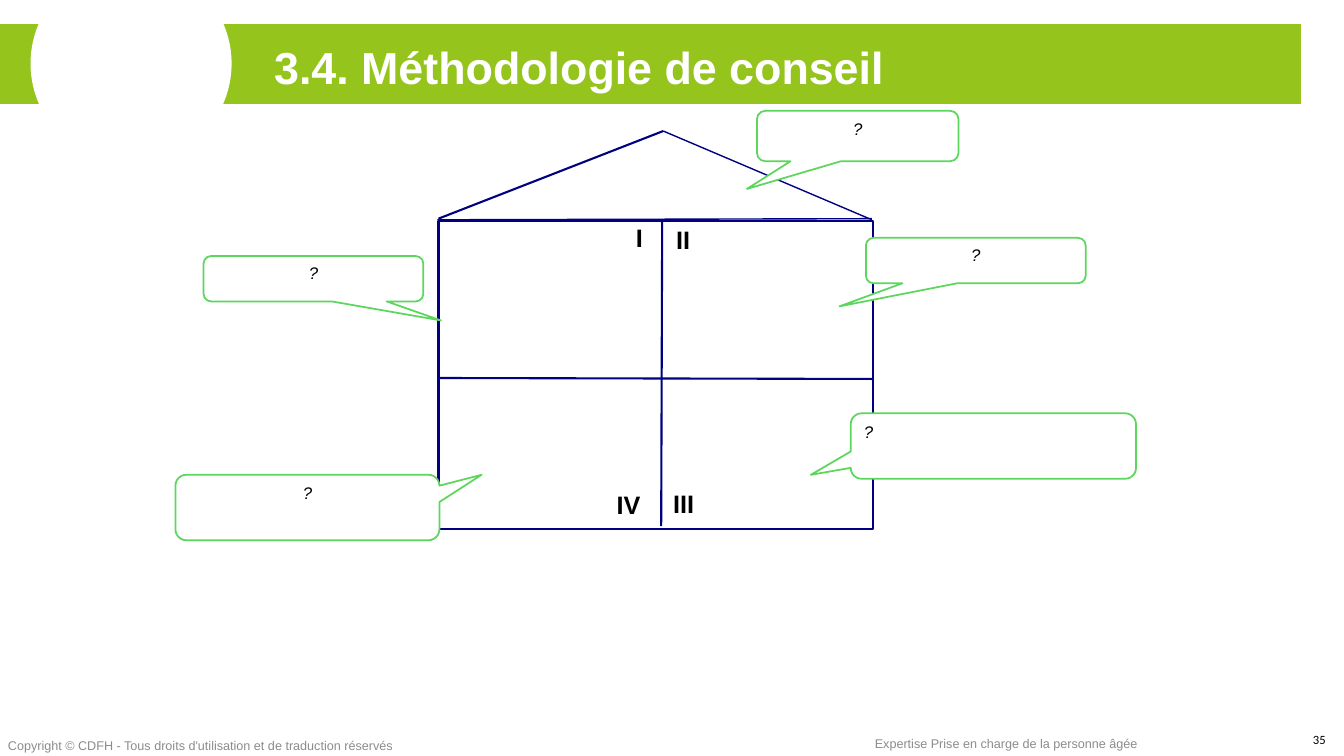
from lxml.etree import SubElement as Sub
from pptx import Presentation
from pptx.dml.color import RGBColor
from pptx.enum.shapes import MSO_CONNECTOR as Conn, MSO_SHAPE as Kind
from pptx.enum.text import MSO_ANCHOR as Anchor, MSO_AUTO_SIZE as Auto, PP_ALIGN as Align
from pptx.oxml.ns import qn
from pptx.util import Pt

GREEN, WHITE, NAVY, LIME, GREY, BLACK = (
    "95C41D", "FFFFFF", "000080", "5CD65C", "8C8C8C", "000000")

TITLE = {"name": "Arial", "size": Pt(32), "bold": True}
ROOM = {"name": "Arial", "size": Pt(18), "bold": True}
ASK = {"name": "Arial", "size": Pt(12), "italic": True}
FOOT = {"name": "Arial", "size": Pt(9)}
PAGE = {"name": "Calibri", "size": Pt(9)}


def tint(part, color):
    """Give a fill or a font a solid colour."""
    if hasattr(part, "solid"):
        part.solid()
        part.fore_color.rgb = RGBColor.from_string(color)
    else:
        part.color.rgb = RGBColor.from_string(color)


def write(frame, text, style, color, align=Align.LEFT, anchor=Anchor.TOP):
    frame.text = text
    frame.vertical_anchor = anchor
    para = frame.paragraphs[0]
    para.alignment = align
    font = para.runs[0].font
    for key, value in style.items():
        setattr(font, key, value)
    tint(font, color)


def shape(slide, kind, box, fill, line, width):
    item = slide.shapes.add_shape(kind, *map(Pt, box))
    item.shadow.inherit = False
    if fill:
        tint(item.fill, fill)
    else:
        item.fill.background()
    tint(item.line, line)
    item.line.width = Pt(width)
    return item


def label(slide, box, text, style, color, wrap=True, **place):
    frame = slide.shapes.add_textbox(*map(Pt, box)).text_frame
    frame.word_wrap = wrap
    write(frame, text, style, color, **place)


def stroke(slide, ends, width):
    line = slide.shapes.add_connector(Conn.STRAIGHT, *map(Pt, ends))
    tint(line.line, NAVY)
    line.line.width = Pt(width)
    Sub(line.element.spPr, qn("a:effectLst"))


def bubble(slide, box, tip, align=Align.CENTER):
    item = shape(slide, Kind.ROUNDED_RECTANGULAR_CALLOUT, box, WHITE, LIME, 1.25)
    for i, value in enumerate(tip):
        item.adjustments[i] = value
    write(item.text_frame, "?", ASK, BLACK, align)


def header(slide):
    shape(slide, Kind.RECTANGLE, (-1.4, 16.6, 931, 58.3), GREEN, WHITE, 1)
    shape(slide, Kind.OVAL, (22.3, -25.9, 142.6, 142.6), WHITE, WHITE, 1)
    title = slide.shapes.title
    title.left, title.top, title.width, title.height = map(
        Pt, (188.6, 24.5, 637.2, 46.1))
    title.text_frame.auto_size = Auto.NONE
    write(title.text_frame, "3.4. Méthodologie de conseil", TITLE, WHITE)
    # Bring the title in front of the band
    title.element.getparent().append(title.element)


def footer(slide):
    label(slide, (-1.4, 523.4, 480.2, 18),
          "Copyright © CDFH - Tous droits d'utilisation et de traduction réservés",
          FOOT, GREY)
    label(slide, (617.8, 522, 203.8, 18),
          "Expertise Prise en charge de la personne âgée", FOOT, GREY, wrap=False)
    label(slide, (916.6, 514.1, 37.4, 28.8), "35", PAGE, BLACK,
          align=Align.RIGHT, anchor=Anchor.MIDDLE)


def house(slide):
    # Walls and rooms
    stroke(slide, (313.2, 270, 623.5, 270.7), 1.5)
    stroke(slide, (473, 157.7, 472.3, 375.8), 1.5)
    shape(slide, Kind.RECTANGLE, (313.2, 157.7, 310.3, 220.3), None, NAVY, 1.5)
    for text, left, top, width in (
            ("I", 447.1, 155.5, 23.8), ("II", 475.9, 157, 36),
            ("III", 473.8, 345.6, 36), ("IV", 433.4, 346.3, 38.9)):
        label(slide, (left, top, width, 28.8), text, ROOM, BLACK)
    # Roof
    stroke(slide, (313.2, 156.2, 473.8, 93.6), 1.5)
    stroke(slide, (473.8, 93.6, 622.8, 157), 1)
    stroke(slide, (312.5, 157, 622.8, 156.2), 1)


def main():
    deck = Presentation()
    deck.slide_width, deck.slide_height = Pt(960), Pt(540)
    slide = deck.slides.add_slide(deck.slide_layouts[5])
    header(slide)
    footer(slide)
    house(slide)
    # Questions around the house
    bubble(slide, (540.7, 79.2, 144, 36), (-0.55, 1.05))
    bubble(slide, (618.5, 169.9, 157, 32.4), (-0.62, 1.01))
    bubble(slide, (145.4, 182.9, 157, 32.4), (0.58, 0.92))
    bubble(slide, (125.3, 339.1, 188.6, 46.8), (0.66, -0.5))
    bubble(slide, (607.7, 295.2, 203.8, 46.8), (-0.64, 0.44), Align.LEFT)
    deck.save("out.pptx")


if __name__ == "__main__":
    main()
